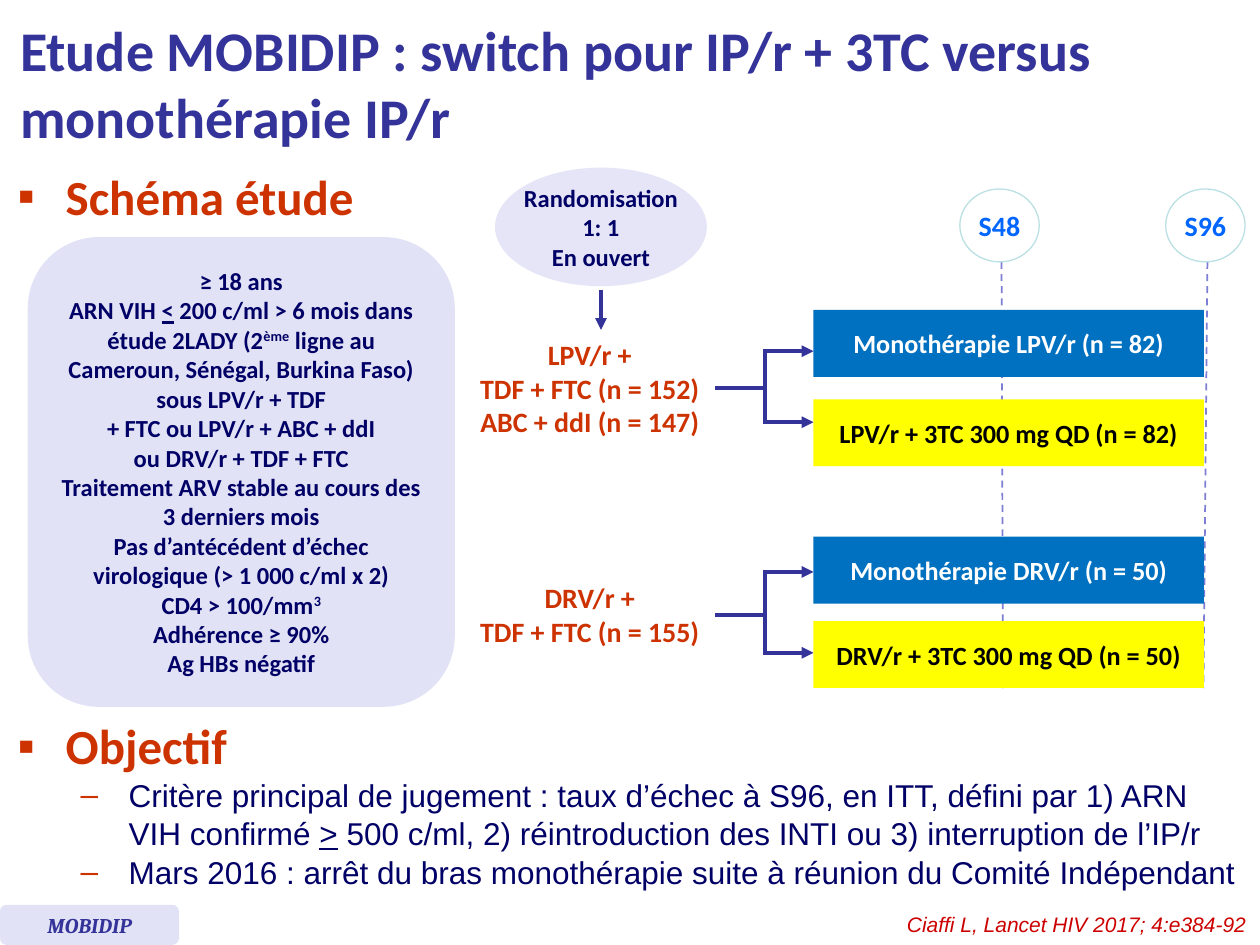
from lxml.etree import SubElement
from pptx import Presentation
from pptx.dml.color import RGBColor
from pptx.enum.dml import MSO_LINE as Dash
from pptx.enum.shapes import MSO_CONNECTOR as Link, MSO_SHAPE as Kind
from pptx.enum.text import MSO_ANCHOR as Anchor, MSO_AUTO_SIZE as Auto, PP_ALIGN as Align
from pptx.oxml.ns import qn
from pptx.util import Cm, Pt

NAVY, INDIGO, RUST, PALE = "000066", "333399", "CC3300", "E2E2F6"
BLUE, YELLOW, WHITE, BLACK = "0070C0", "FFFF00", "FFFFFF", "000000"
BAR_W, BAR_H = 7.87, 1.35


def tint(code):
    return RGBColor.from_string(code)


def style(par, size, color, face="Calibri", bold=True, italic=False):
    for run in par.runs:
        font = run.font
        font.size, font.name, font.bold, font.italic = Pt(size), face, bold, italic
        font.color.rgb = tint(color)


def write(par, text):
    """Text between bars is underlined if a sign, else superscript."""
    if "|" not in text:
        par.text = text
        return
    for i, part in enumerate(text.split("|")):
        run = par.add_run()
        run.text = part
        if i % 2 and part in "<>":
            run.font.underline = True
        elif i % 2:
            run.font._element.set("baseline", "30000")


def fill_text(shape, lines, size, color, align=Align.CENTER, wrap=True, **look):
    frame = shape.text_frame
    frame.word_wrap = wrap
    frame.vertical_anchor = Anchor.MIDDLE
    for i, line in enumerate(lines):
        par = frame.add_paragraph() if i else frame.paragraphs[0]
        write(par, line)
        par.alignment = align
        style(par, size, color, **look)
    return frame


def place(shape, box):
    shape.left, shape.top, shape.width, shape.height = map(Cm, box)


def block(slide, kind, box, fill, edge=None):
    shape = slide.shapes.add_shape(kind, *map(Cm, box))
    shape.shadow.inherit = False
    shape.fill.solid()
    shape.fill.fore_color.rgb = tint(fill)
    if edge:
        shape.line.color.rgb = tint(edge)
        shape.line.width = Pt(0.75)
    else:
        shape.line.fill.background()
    return shape


def label(slide, box, lines, size, color, **look):
    shape = slide.shapes.add_textbox(*map(Cm, box))
    fill_text(shape, lines, size, color, **look)


def rule(slide, x1, y1, x2, y2, color=INDIGO, width=2.25, head=False, dash=False):
    line = slide.shapes.add_connector(Link.STRAIGHT, *map(Cm, (x1, y1, x2, y2)))
    line.line.color.rgb = tint(color)
    line.line.width = Pt(width)
    if dash:
        line.line.dash_style = Dash.DASH
    if head:
        SubElement(line.line._get_or_add_ln(), qn("a:tailEnd"), type="triangle")
    SubElement(line._element.spPr, qn("a:effectLst"))


def bullet(par, mark, left):
    props = par._p.get_or_add_pPr()
    props.set("marL", str(Cm(left)))
    props.set("indent", str(Cm(-0.97)))
    color = SubElement(props, qn("a:buClr"))
    SubElement(color, qn("a:srgbClr"), val=RUST)
    SubElement(props, qn("a:buFont"), typeface="Arial")
    SubElement(props, qn("a:buChar"), char=mark)


def heading(slide, box, text):
    title = slide.shapes.title
    place(title, box)
    frame = fill_text(title, [text], 32, INDIGO, align=Align.LEFT)
    frame.auto_size = Auto.NONE


def section(holder, box, head, items=()):
    place(holder, box)
    frame = holder.text_frame
    frame.auto_size = Auto.NONE
    frame.vertical_anchor = Anchor.TOP
    for i, text in enumerate([head, *items]):
        par = frame.add_paragraph() if i else frame.paragraphs[0]
        write(par, text)
        par.level = 1 if i else 0
        par.space_before = Pt(0.8 if i else 0)
        if i:
            bullet(par, "–", 2.24)
            style(par, 18, NAVY, face="Arial", bold=False)
        else:
            bullet(par, "▪", 0.97)
            style(par, 28, RUST)


def criteria(slide, box, lines):
    shape = block(slide, Kind.ROUNDED_RECTANGLE, box, PALE)
    frame = fill_text(shape, lines, 14, NAVY)
    frame.margin_left = frame.margin_right = Cm(0.22)


def draw_lots(slide, box, lines):
    left, top, width, height = box
    oval = block(slide, Kind.OVAL, box, "E5E5F7")
    fill_text(oval, lines, 14, NAVY, wrap=False)
    mid, base = left + width / 2, top + height
    rule(slide, mid, base + 0.07, mid, base + 0.88, head=True)


def week(slide, box, name, foot):
    left, top, width, height = box
    rule(slide, left + 0.84, top + height, foot, 13.87, "7E7ED4", 1, dash=True)
    oval = block(slide, Kind.OVAL, box, WHITE, "BBE0E3")
    fill_text(oval, [name], 16, "0066FF", wrap=False)


def arm(slide, box, group, bars, gap, tips):
    """Group on the left, then a fork to two treatment bars."""
    left, top, width, height = box
    stem, fork, edge = left + 5.02, left + 6.02, left + width - BAR_W
    mid = top + 1.57
    tall = 0.3 + 0.67 * len(group)
    label(slide, (left, mid - tall / 2, 4.98, tall), group, 16, RUST, wrap=False)
    # Fork
    rule(slide, stem, mid, fork, mid)
    rule(slide, fork, top + tips[0], fork, top + tips[1])
    for tip in tips:
        rule(slide, fork - 0.03, top + tip, edge, top + tip, head=True)
    # Bars
    for i, (text, fill, color) in enumerate(zip(bars, (BLUE, YELLOW), (WHITE, BLACK))):
        bar = block(slide, Kind.RECTANGLE, (edge, top + i * gap, BAR_W, BAR_H), fill)
        fill_text(bar, [text], 15, color)


def footer(slide, box, tag, source):
    left, top, width, height = box
    shape = block(slide, Kind.ROUNDED_RECTANGLE, (left, top, 3.61, height), PALE)
    fill_text(shape, [tag], 12, INDIGO, wrap=False, face="Cambria", italic=True)
    label(slide, (left + width - 13.26, top, 13.26, 0.76), [source], 12, "CC0000",
          align=Align.RIGHT, face="Arial", bold=False, italic=True)


def main():
    deck = Presentation()
    deck.slide_width, deck.slide_height = Cm(25.4), Cm(19.05)
    slide = deck.slides.add_slide(deck.slide_layouts[3])
    first, second = list(slide.placeholders)[1:]

    # Title and lists
    heading(slide, (0.15, 0.13, 22.76, 3.07),
            "Etude MOBIDIP : switch pour IP/r + 3TC versus monothérapie IP/r")
    section(first, (0.1, 3.23, 8.13, 1.6), "Schéma étude")
    section(second, (0.1, 14.3, 25.17, 3.86), "Objectif", [
        "Critère principal de jugement : taux d’échec à S96, en ITT, défini par 1) ARN "
        "VIH confirmé |>| 500 c/ml, 2) réintroduction des INTI ou 3) interruption de l’IP/r",
        "Mars 2016 : arrêt du bras monothérapie suite à réunion du Comité Indépendant"])

    # Study scheme
    criteria(slide, (0.56, 4.78, 8.61, 9.47), [
        "≥ 18 ans",
        "ARN VIH |<| 200 c/ml > 6 mois dans étude 2LADY (2|ème| ligne au "
        "Cameroun, Sénégal, Burkina Faso) sous LPV/r + TDF",
        "+ FTC ou LPV/r + ABC + ddI\vou DRV/r + TDF + FTC",
        "Traitement ARV stable au cours des 3 derniers mois",
        "Pas d’antécédent d’échec virologique (> 1 000 c/ml x 2)",
        "CD4 > 100/mm|3|", "Adhérence ≥ 90%", "Ag HBs négatif"])
    draw_lots(slide, (9.98, 3.38, 4.27, 2.39), ["Randomisation", "1: 1", "En ouvert"])
    week(slide, (19.35, 3.81, 1.6, 1.47), "S48", 20.22)
    week(slide, (23.5, 3.81, 1.6, 1.47), "S96", 24.26)
    arm(slide, (9.4, 6.25, 14.87, 3.15),
        ["LPV/r +", "TDF + FTC (n = 152)", "ABC + ddI (n = 147)"],
        ["Monothérapie LPV/r (n = 82)", "LPV/r + 3TC 300 mg QD (n = 82)"],
        1.8, (0.83, 2.26))
    arm(slide, (9.4, 10.82, 14.87, 3.05),
        ["DRV/r +", "TDF + FTC (n = 155)"],
        ["Monothérapie DRV/r (n = 50)", "DRV/r + 3TC 300 mg QD (n = 50)"],
        1.7, (0.71, 2.34))

    # Footer
    footer(slide, (0, 18.24, 25.38, 0.81), "MOBIDIP", "Ciaffi L, Lancet HIV 2017; 4:e384-92")
    deck.save("out.pptx")


if __name__ == "__main__":
    main()
